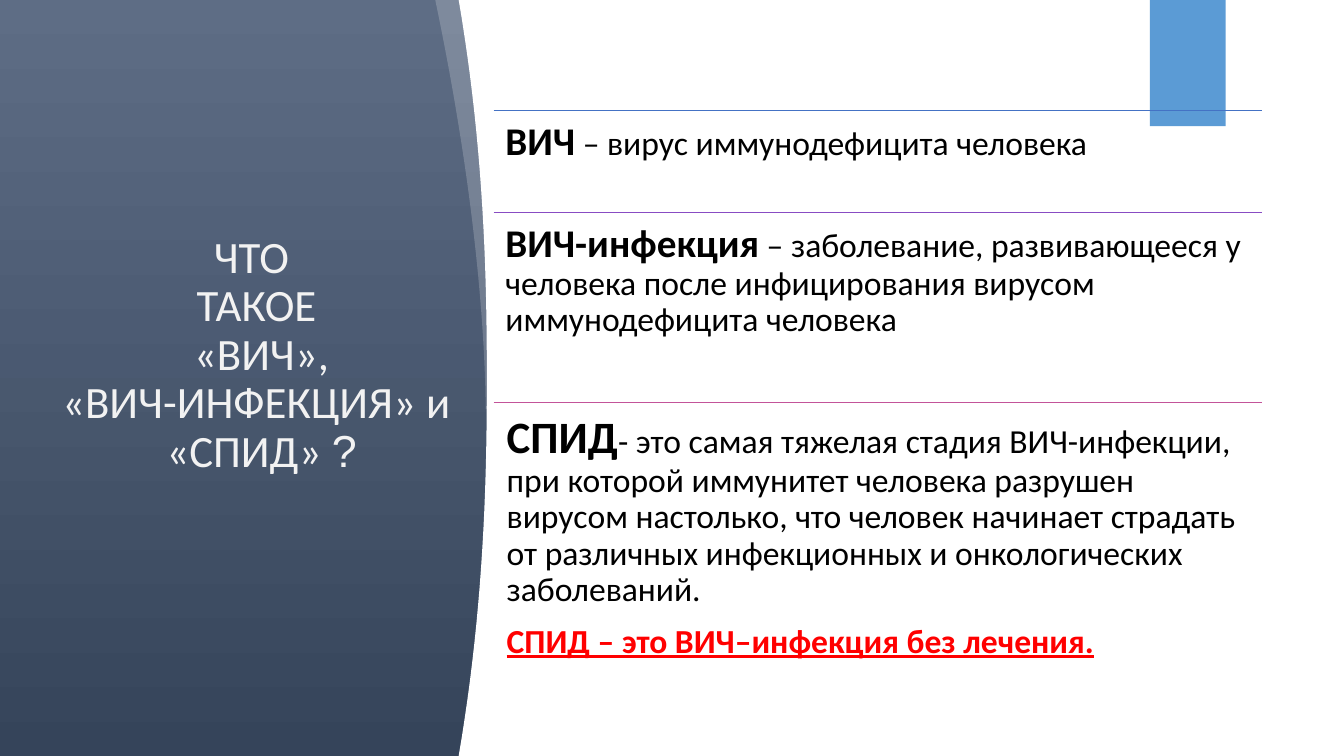
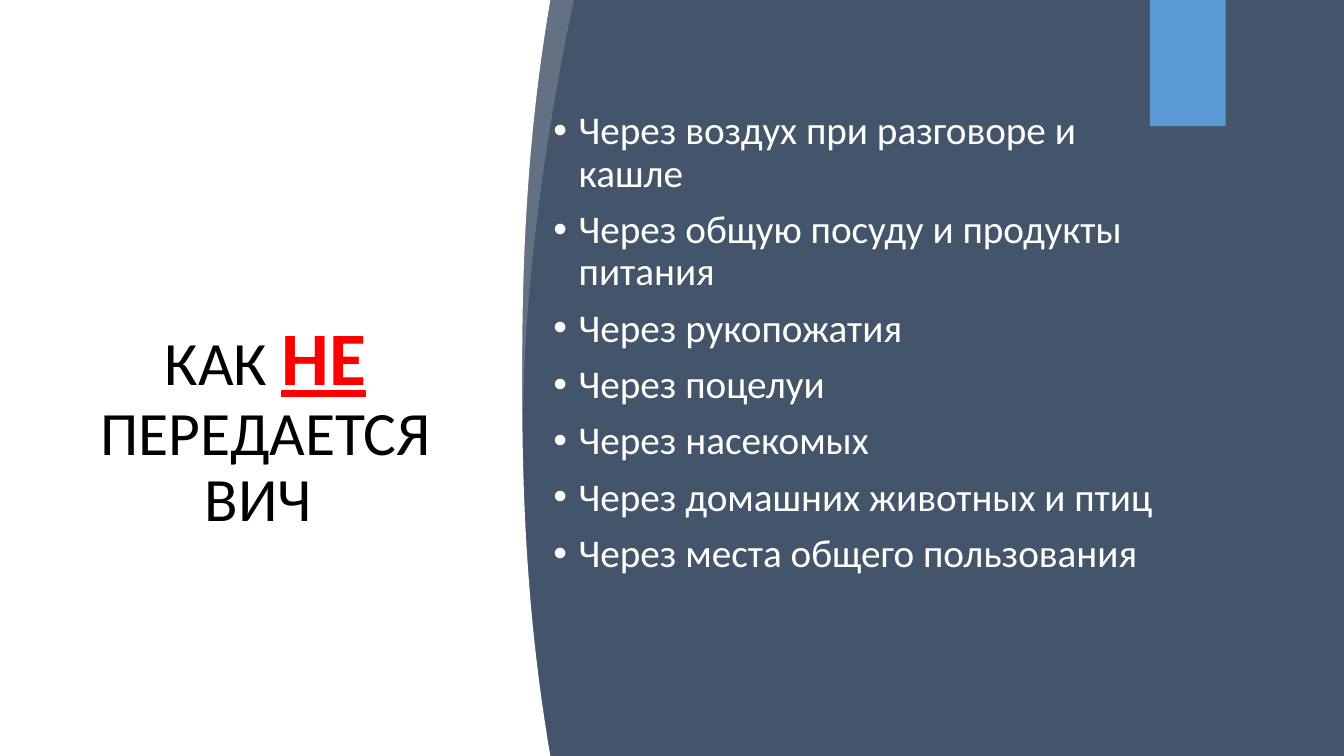
from lxml.etree import SubElement
from pptx import Presentation
from pptx.dml.color import RGBColor
from pptx.enum.shapes import MSO_CONNECTOR, MSO_SHAPE
from pptx.enum.text import MSO_ANCHOR, MSO_AUTO_SIZE, PP_ALIGN
from pptx.oxml.ns import qn
from pptx.util import Cm, Pt

WHITE = RGBColor(0xFF, 0xFF, 0xFF)
BLACK = RGBColor(0x00, 0x00, 0x00)
RED = RGBColor(0xFF, 0x00, 0x00)
PALE = RGBColor(0xF2, 0xF2, 0xF2)
GREY = RGBColor(0xE7, 0xE6, 0xE6)
SLATE = RGBColor(0x44, 0x54, 0x6A)
SLATE_LIGHT = RGBColor(0x5E, 0x6D, 0x85)
SLATE_DARK = RGBColor(0x35, 0x44, 0x5A)
TAB_BLUE = RGBColor(0x5B, 0x9B, 0xD5)
RULE_BLUE = RGBColor(0x44, 0x72, 0xC4)
RULE_VIOLET = RGBColor(0x88, 0x4C, 0xC3)
RULE_PINK = RGBColor(0xC3, 0x53, 0x99)

FONT = "Calibri"
PAGE_WIDTH, PAGE_HEIGHT = 33.87, 19.05
MIRROR_SUM = 25.43
STEPS = 40
GLOW_HEIGHT = 10.31
GLOW_OUTER = [(12.42, 10.21), (12.51, 8.39), (12.51, 5.75),
              (12.44, 2.91), (12.32, 0.46), (12.29, 0)]

DEFINITIONS = [
    (2.77, 2.59, 0.3, RULE_BLUE, [
        [("ВИЧ", {"size": 28, "bold": True}),
         (" – вирус иммунодефицита человека", {})]]),
    (5.34, 4.8, 0.3, RULE_VIOLET, [
        [("ВИЧ-инфекция", {"size": 28, "bold": True}),
         (" – заболевание, развивающееся у человека после инфицирования "
          "вирусом иммунодефицита человека", {})]]),
    (10.13, 7.7, 0.33, RULE_PINK, [
        [("СПИД", {"size": 32, "bold": True}),
         ("- это самая тяжелая стадия ВИЧ-инфекции, при которой иммунитет "
          "человека разрушен вирусом настолько, что человек начинает страдать "
          "от различных инфекционных и онкологических заболеваний.", {})],
        [("СПИД – это ВИЧ–инфекция без лечения.",
          {"bold": True, "underline": True, "color": RED})]]),
]

SAFE_CONTACTS = [
    "Через воздух при разговоре и кашле",
    "Через общую посуду и продукты питания",
    "Через рукопожатия",
    "Через поцелуи",
    "Через насекомых",
    "Через домашних животных и птиц",
    "Через места общего пользования",
]


def add_span(para, text, size=24, color=BLACK, font=FONT, bold=False, underline=False):
    for index, line in enumerate(text.split("\n")):
        if index:
            para.add_line_break()
        span = para.add_run()
        span.text = line
        span.font.name = font
        span.font.size = Pt(size)
        span.font.color.rgb = color
        span.font.bold = bold
        span.font.underline = underline


def fill_paragraphs(frame, paragraphs, align=PP_ALIGN.LEFT, before=0, after=0):
    for index, spans in enumerate(paragraphs):
        para = frame.add_paragraph() if index else frame.paragraphs[0]
        para.alignment = align
        para.line_spacing = 0.9
        para.space_before = Pt(before)
        para.space_after = Pt(after)
        for text, style in spans:
            add_span(para, text, **style)


def place(holder, left, top, width, height, anchor):
    holder.left, holder.top = Cm(left), Cm(top)
    holder.width, holder.height = Cm(width), Cm(height)
    holder.element.getparent().append(holder.element)
    frame = holder.text_frame
    frame.auto_size = MSO_AUTO_SIZE.NONE
    frame.word_wrap = True
    frame.vertical_anchor = anchor
    return frame


def add_title(page, left, top, width, height, spans):
    frame = place(page.shapes.title, left, top, width, height, MSO_ANCHOR.MIDDLE)
    fill_paragraphs(frame, [spans], align=PP_ALIGN.CENTER)


def paint(shape, color):
    shape.shadow.inherit = False
    shape.line.fill.background()
    shape.fill.solid()
    shape.fill.fore_color.rgb = color


def add_rectangle(page, left, top, width, height, color):
    box = page.shapes.add_shape(
        MSO_SHAPE.RECTANGLE, Cm(left), Cm(top), Cm(width), Cm(height))
    paint(box, color)
    return box


def add_outline(page, points, color):
    corners = [(Cm(x), Cm(y)) for x, y in points]
    builder = page.shapes.build_freeform(*corners[0])
    builder.add_line_segments(corners[1:], close=True)
    shape = builder.convert_to_shape()
    paint(shape, color)
    return shape


def panel_edge():
    middle = PAGE_HEIGHT / 2
    levels = [PAGE_HEIGHT * step / STEPS for step in range(STEPS + 1)]
    return [(12.27 - 0.71 * abs(y / middle - 1) ** 2.3, y) for y in levels]


def glow_edge():
    levels = [GLOW_HEIGHT * step / STEPS for step in range(STEPS + 1)]
    return [(12.24 - 1.27 * (1 - y / GLOW_HEIGHT) ** 1.7, y) for y in levels]


def mirror(points):
    return [(MIRROR_SUM - x, y) for x, y in points]


def add_backdrop(page, color, glow_color, panel_on_left=False):
    backdrop = add_rectangle(page, 0, 0, PAGE_WIDTH, PAGE_HEIGHT, color)
    edge, glow_points, far_side = panel_edge(), glow_edge() + GLOW_OUTER, PAGE_WIDTH
    if panel_on_left:
        edge, glow_points, far_side = mirror(edge), mirror(glow_points), 0
    glow = add_outline(page, glow_points, glow_color)
    tint = glow.element.spPr.find(".//" + qn("a:srgbClr"))
    SubElement(tint, qn("a:alpha")).set("val", "20000")
    add_outline(page, edge + [(far_side, PAGE_HEIGHT), (far_side, 0)], WHITE)
    add_rectangle(page, 28.98, 0, 1.91, 3.18, TAB_BLUE)
    return backdrop


def add_definition(page, top, height, inset, color, paragraphs):
    left, width = 12.44, 19.37
    rule = page.shapes.add_connector(
        MSO_CONNECTOR.STRAIGHT, Cm(left), Cm(top), Cm(left + width), Cm(top))
    rule.line.color.rgb = color
    rule.line.width = Pt(0.5)
    SubElement(rule.element.spPr, qn("a:effectLst"))
    box = page.shapes.add_textbox(Cm(left), Cm(top), Cm(width), Cm(height))
    frame = box.text_frame
    frame.word_wrap = True
    frame.margin_left = frame.margin_right = Cm(inset)
    frame.margin_top = frame.margin_bottom = Cm(inset)
    fill_paragraphs(frame, paragraphs, after=11)


def build_definitions(deck):
    page = deck.slides.add_slide(deck.slide_layouts[5])
    backdrop = add_backdrop(page, SLATE, WHITE)
    backdrop.fill.gradient()
    backdrop.fill.gradient_angle = 270
    for stop, color in zip(backdrop.fill.gradient_stops, (SLATE_LIGHT, SLATE_DARK)):
        stop.color.rgb = color
    add_title(page, 1.17, 3.25, 10.59, 11.43, [
        ("ЧТО \nТАКОЕ\n «ВИЧ»,\n«ВИЧ-ИНФЕКЦИЯ» и\n «СПИД» ",
         {"size": 32, "color": PALE}),
        ("?", {"size": 32, "color": PALE, "font": "Arial"})])
    for definition in DEFINITIONS:
        add_definition(page, *definition)


def build_safe_contacts(deck):
    page = deck.slides.add_slide(deck.slide_layouts[1])
    add_backdrop(page, SLATE, GREY, panel_on_left=True)
    add_title(page, 1.8, 4.57, 9.78, 12.42, [
        ("КАК ", {"size": 44}),
        ("НЕ", {"size": 54, "color": RED, "bold": True, "underline": True}),
        (" ПЕРЕДАЕТСЯ ВИЧ ", {"size": 44})])
    frame = place(page.placeholders[1], 13.69, 2.67, 16.43, 14.33, MSO_ANCHOR.TOP)
    style = {"size": 28, "color": WHITE}
    fill_paragraphs(frame, [[(text, style)] for text in SAFE_CONTACTS], before=10)
    indent = Cm(0.64)
    for para in frame.paragraphs:
        properties = para._p.get_or_add_pPr()
        properties.set("marL", str(indent))
        properties.set("indent", str(-indent))


def main():
    deck = Presentation()
    deck.slide_width, deck.slide_height = Cm(PAGE_WIDTH), Cm(PAGE_HEIGHT)
    build_definitions(deck)
    build_safe_contacts(deck)
    deck.save("out.pptx")


if __name__ == "__main__":
    main()
